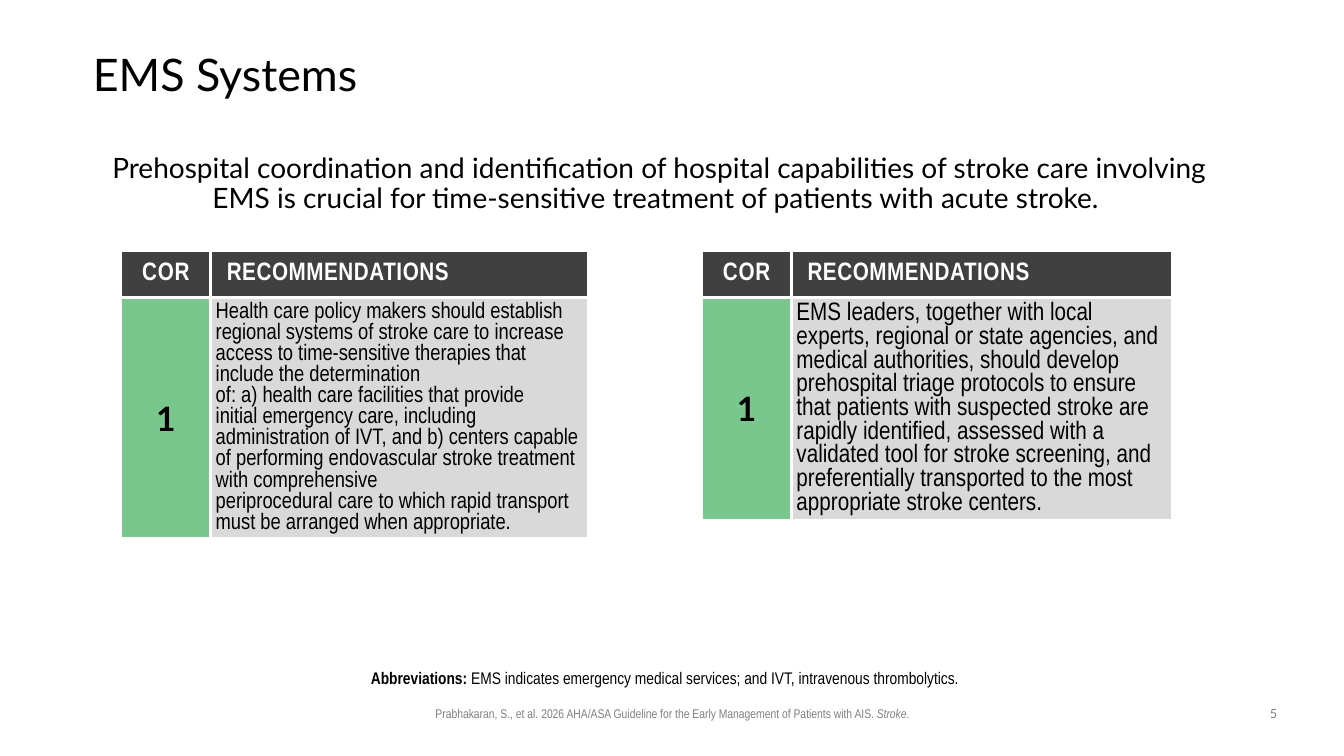
import pptx
import pptx.util
import pptx.dml.color
import pptx.enum.text
import pptx.oxml
import pptx.oxml.ns
from lxml import etree

Inches = pptx.util.Inches
Align = pptx.enum.text.PP_ALIGN
Anchor = pptx.enum.text.MSO_ANCHOR

NARROW, LATO = "Arial Narrow", "Lato"
BLACK, WHITE, GREY = "000000", "FFFFFF", "808080"
HEADER_FILL, CLASS_FILL, ADVICE_FILL = "404040", "79C78D", "D9D9D9"

HEADER = {"name": NARROW, "size": 18, "color": WHITE, "bold": True}
NOTE = {"name": NARROW, "size": 12, "color": BLACK}
CITATION = {"name": NARROW, "size": 9, "color": GREY}

REGIONAL_SYSTEMS = [
    "Health care policy makers should establish regional systems of stroke care to "
    "increase access to time-sensitive therapies that include the determination",
    "of: a) health care facilities that provide",
    "initial emergency care, including administration of IVT, and b) centers capable "
    "of performing endovascular stroke treatment with comprehensive",
    "periprocedural care to which rapid transport must be arranged when appropriate.",
]
TRIAGE_PROTOCOLS = [
    "EMS leaders, together with local experts, regional or state agencies, and medical "
    "authorities, should develop prehospital triage protocols to ensure that patients "
    "with suspected stroke are rapidly identified, assessed with a validated tool for "
    "stroke screening, and preferentially transported to the most appropriate stroke "
    "centers.",
]


def rgb(value):
    return pptx.dml.color.RGBColor.from_string(value)


def apply(target, values):
    for name, value in values.items():
        setattr(target, name, value)


def add_span(para, text, style):
    span = para.add_run()
    span.text = text
    values = dict(style)
    span.font.color.rgb = rgb(values.pop("color"))
    tracking = values.pop("tracking", None)
    if tracking is not None:
        span._r.get_or_add_rPr().set("spc", str(tracking))
    values["size"] = pptx.util.Pt(values["size"])
    apply(span.font, values)


def write(frame, paragraphs, align=Align.LEFT, line_spacing=1.0):
    """Each paragraph is a list of (text, style) spans."""
    for index, spans in enumerate(paragraphs):
        para = frame.paragraphs[0] if index == 0 else frame.add_paragraph()
        apply(para, {"alignment": align, "line_spacing": line_spacing,
                     "space_before": pptx.util.Pt(0)})
        for text, style in spans:
            add_span(para, text, style)


def place(box, left, top, width, height):
    apply(box, {"left": Inches(left), "top": Inches(top),
                "width": Inches(width), "height": Inches(height)})


def set_frame(frame, anchor, insets):
    sides = ("margin_left", "margin_top", "margin_right", "margin_bottom")
    apply(frame, dict(zip(sides, map(Inches, insets))))
    apply(frame, {"word_wrap": True, "vertical_anchor": anchor,
                  "auto_size": pptx.enum.text.MSO_AUTO_SIZE.NONE})


def fill_placeholder(box, position, spans, align, anchor, insets):
    place(box, *position)
    set_frame(box.text_frame, anchor, insets)
    write(box.text_frame, [spans], align, 0.9)
    properties = box.text_frame.paragraphs[0]._p.get_or_add_pPr()
    properties.set("marL", "0")
    properties.set("indent", "0")
    etree.SubElement(properties, pptx.oxml.ns.qn("a:buNone"))


def add_label(page, position, spans):
    box = page.shapes.add_textbox(*map(Inches, position))
    set_frame(box.text_frame, Anchor.TOP, (0.1, 0.05, 0.1, 0.05))
    write(box.text_frame, [spans], Align.CENTER)


def format_cell(cell, fill, paragraphs, align, inset=None):
    properties = cell._tc.get_or_add_tcPr()
    for side in ("lnL", "lnR", "lnT", "lnB"):
        properties.append(pptx.oxml.parse_xml(
            f'<a:{side} {pptx.oxml.ns.nsdecls("a")} w="28575"><a:solidFill>'
            f'<a:srgbClr val="{WHITE}"/></a:solidFill></a:{side}>'))
    cell.fill.solid()
    cell.fill.fore_color.rgb = rgb(fill)
    cell.vertical_anchor = Anchor.MIDDLE
    if inset is not None:
        for side in ("left", "top", "right", "bottom"):
            setattr(cell, f"margin_{side}", Inches(inset))
    write(cell.text_frame, paragraphs, align)


def add_recommendation(page, left, height, advice_width, row_height, advice, size):
    widths = (0.89, advice_width)
    holder = page.shapes.add_table(2, 2, Inches(left), Inches(2.49),
                                   Inches(sum(widths)), Inches(height))
    table = holder.table
    for column, width in zip(table.columns, widths):
        column.width = Inches(width)
    for row, depth in zip(table.rows, (0.46, row_height)):
        row.height = Inches(depth)
    holder.height = Inches(height)

    # Header row
    format_cell(table.cell(0, 0), HEADER_FILL, [[("COR", {**HEADER, "tracking": 50})]],
                Align.CENTER)
    heading = table.cell(0, 1)
    format_cell(heading, HEADER_FILL,
                [[("RECOMMENDATIONS", {**HEADER, "tracking": 40})]], Align.LEFT)
    heading.text_frame.paragraphs[0]._p.get_or_add_pPr().set("marL", str(Inches(0.06)))

    # Class and advice
    grade = {"name": LATO, "size": 24, "color": BLACK, "bold": True}
    body = {"name": NARROW, "size": size, "color": BLACK, "bold": False}
    format_cell(table.cell(1, 0), CLASS_FILL, [[("1", grade)]], Align.CENTER, 0.05)
    format_cell(table.cell(1, 1), ADVICE_FILL, [[(text, body)] for text in advice],
                Align.LEFT, 0.05)


def main():
    deck = pptx.Presentation()
    apply(deck, {"slide_width": Inches(13.33), "slide_height": Inches(7.5)})
    page = deck.slides.add_slide(deck.slide_layouts.get_by_name("Two Content"))
    title, message, abbreviations = page.placeholders

    # Title and key message
    fill_placeholder(title, (0.92, 0.4, 11.5, 0.72),
                     [("EMS Systems", {"name": LATO, "size": 32, "color": BLACK})],
                     Align.LEFT, Anchor.MIDDLE, (0, 0, 0, 0))
    fill_placeholder(message, (0.92, 1.48, 11.24, 0.82),
                     [("Prehospital coordination and identification of hospital "
                       "capabilities of stroke care involving EMS is crucial for "
                       "time-sensitive treatment of patients with acute stroke. ",
                       {"name": LATO, "size": 20, "color": BLACK})],
                     Align.CENTER, Anchor.TOP, (0.1, 0.05, 0.1, 0.05))

    # Recommendation tables
    add_recommendation(page, 1.2, 3.76, 3.75, 1.44, REGIONAL_SYSTEMS, 16)
    add_recommendation(page, 6.96, 3.56, 3.78, 0.68, TRIAGE_PROTOCOLS, 18)

    # Abbreviations, citation and page number
    fill_placeholder(abbreviations, (1.88, 6.42, 9.57, 0.46),
                     [("Abbreviations: ", {**NOTE, "bold": True}),
                      ("EMS indicates emergency medical services; and IVT, "
                       "intravenous thrombolytics. ", {**NOTE, "bold": False})],
                     Align.CENTER, Anchor.BOTTOM, (0, 0.05, 0.1, 0.05))
    add_label(page, (2.36, 6.95, 8.62, 0.25),
              [("Prabhakaran, S., et al. 2026 AHA/ASA Guideline for the Early "
                "Management of Patients with AIS. ", CITATION),
               ("Stroke", {**CITATION, "italic": True}), (".", CITATION)])
    add_label(page, (12.42, 6.95, 0.42, 0.26), [("5", {**CITATION, "name": LATO})])

    deck.save("out.pptx")


if __name__ == "__main__":
    main()
